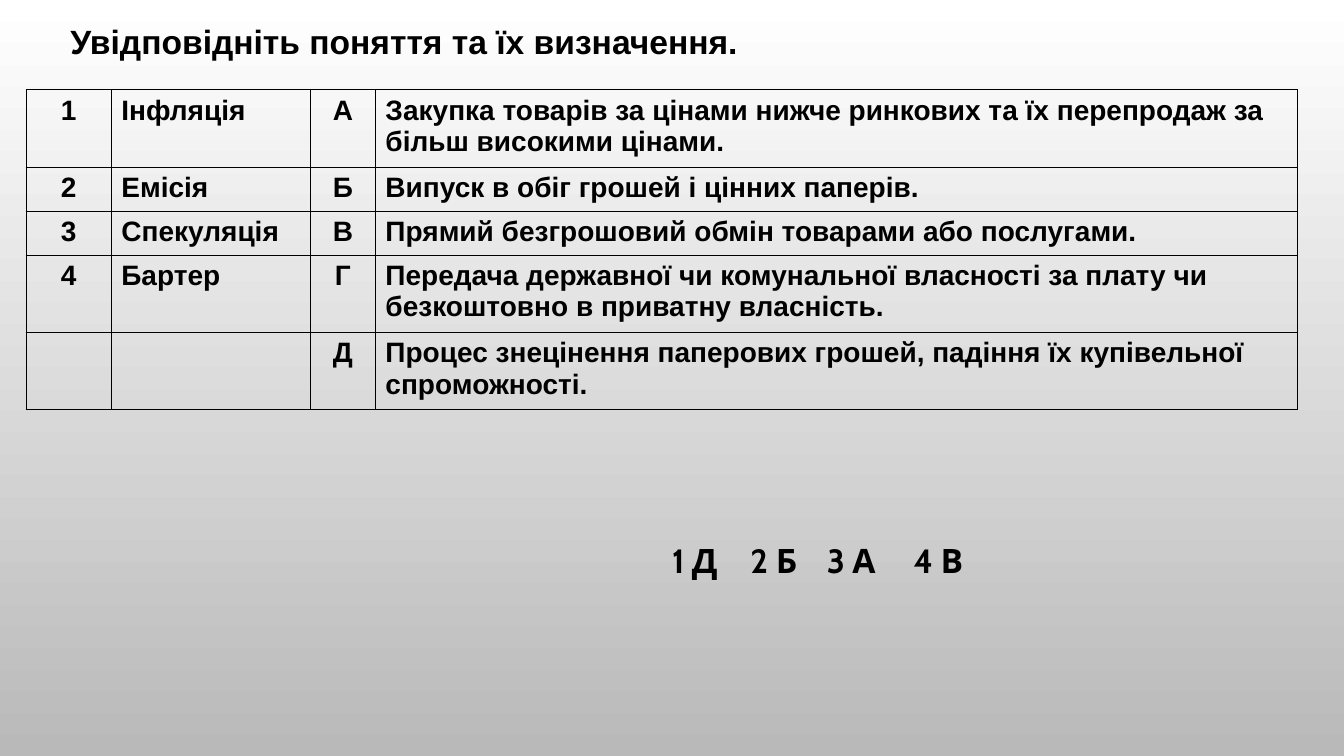
import pptx
import pptx.util
import pptx.dml.color
import pptx.enum.text
import pptx.oxml
import pptx.oxml.ns
from lxml import etree

Pt = pptx.util.Pt
ALIGN = pptx.enum.text.PP_ALIGN

COLORS = {"ink": "000000", "top": "FFFFFF", "bottom": "B9B9B9"}

TITLE = "Увідповідніть поняття та їх визначення."
ANSWERS = ["1 Д", "2 Б", "3 А", "4 В"]
ANSWER_STOPS = [56, 110.5, 172.5]
MATCHES = [
    ("1", "Інфляція", "А", "Закупка товарів за цінами нижче ринкових та їх "
     "перепродаж за більш високими цінами."),
    ("2", "Емісія", "Б", "Випуск в обіг грошей і цінних паперів."),
    ("3", "Спекуляція", "В", "Прямий безгрошовий обмін товарами або послугами."),
    ("4", "Бартер", "Г", "Передача державної чи комунальної власності за плату "
     "чи безкоштовно в приватну власність."),
    ("", "", "Д", "Процес знецінення паперових грошей, падіння їх купівельної "
     "спроможності."),
]
COLUMN_WIDTHS = [60.8, 142.2, 46.5, 658.5]
ONE_LINE, TWO_LINES = 31.4, 55.2
ROW_HEIGHTS = [TWO_LINES, ONE_LINE, ONE_LINE, TWO_LINES, TWO_LINES]
CENTERED_COLUMNS = (0, 2)


def rgb(name):
    return pptx.dml.color.RGBColor.from_string(COLORS[name])


def style(paragraph, font_name, size):
    font = paragraph.font
    font.name, font.size, font.bold = font_name, Pt(size), True
    font.color.rgb = rgb("ink")


def paint_background(slide):
    fill = slide.background.fill
    fill.gradient()
    fill.gradient_angle = 270
    for stop, name in zip(fill.gradient_stops, ("top", "bottom")):
        stop.color.rgb = rgb(name)


def add_line(slide, box, text, font_name, tab_stops=()):
    """One line of bold text, with optional tab stops in points."""
    shape = slide.shapes.add_textbox(*map(Pt, box))
    shape.text_frame.word_wrap = True
    paragraph = shape.text_frame.paragraphs[0]
    paragraph.text = text
    if tab_stops:
        properties = paragraph._p.get_or_add_pPr()
        tabs = etree.SubElement(properties, pptx.oxml.ns.qn("a:tabLst"))
        for stop in tab_stops:
            etree.SubElement(tabs, pptx.oxml.ns.qn("a:tab"),
                             pos=str(Pt(stop)), algn="l")
    style(paragraph, font_name, 24)


def add_borders(cell):
    properties = cell._tc.get_or_add_tcPr()
    for position, side in enumerate(("lnL", "lnR", "lnT", "lnB")):
        border = pptx.oxml.parse_xml(
            f'<a:{side} {pptx.oxml.ns.nsdecls("a")} w="{Pt(1)}"><a:solidFill>'
            f'<a:srgbClr val="{COLORS["ink"]}"/></a:solidFill></a:{side}>')
        properties.insert(position, border)


def add_match_table(slide, left, top):
    frame = slide.shapes.add_table(
        len(MATCHES), len(COLUMN_WIDTHS), Pt(left), Pt(top),
        Pt(sum(COLUMN_WIDTHS)), Pt(sum(ROW_HEIGHTS)))
    table = frame.table
    table.first_row = table.horz_banding = False
    for column, width in zip(table.columns, COLUMN_WIDTHS):
        column.width = Pt(width)
    for row, height, texts in zip(table.rows, ROW_HEIGHTS, MATCHES):
        row.height = Pt(height)
        for index, (cell, text) in enumerate(zip(row.cells, texts)):
            cell.fill.background()
            add_borders(cell)
            paragraph = cell.text_frame.paragraphs[0]
            if text:
                paragraph.text = text
            if index in CENTERED_COLUMNS:
                paragraph.alignment = ALIGN.CENTER
            style(paragraph, "Arial", 20)


def build_matching_slide(presentation):
    slide = presentation.slides.add_slide(presentation.slide_layouts[6])
    paint_background(slide)
    # Answers
    add_line(slide, (473, 382.3, 270.7, 36), "\t".join(ANSWERS), "Cabin",
             ANSWER_STOPS)
    # Task
    add_line(slide, (43.2, 11.5, 495.4, 36), TITLE, "Arial")
    # Terms and definitions
    add_match_table(slide, 18.7, 64.2)


def main():
    presentation = pptx.Presentation()
    presentation.slide_width, presentation.slide_height = Pt(960), Pt(540)
    build_matching_slide(presentation)
    presentation.save("out.pptx")


if __name__ == "__main__":
    main()
